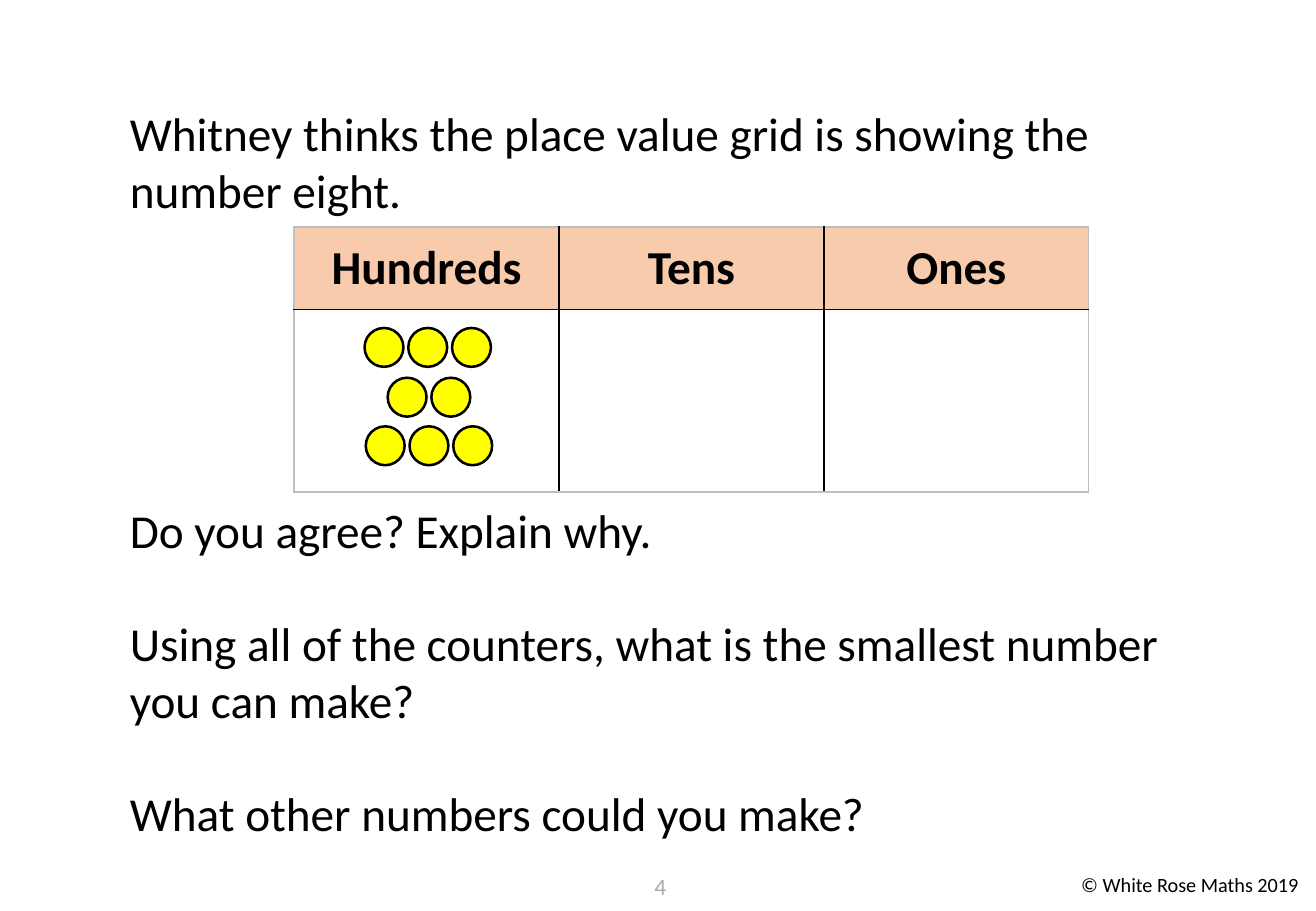
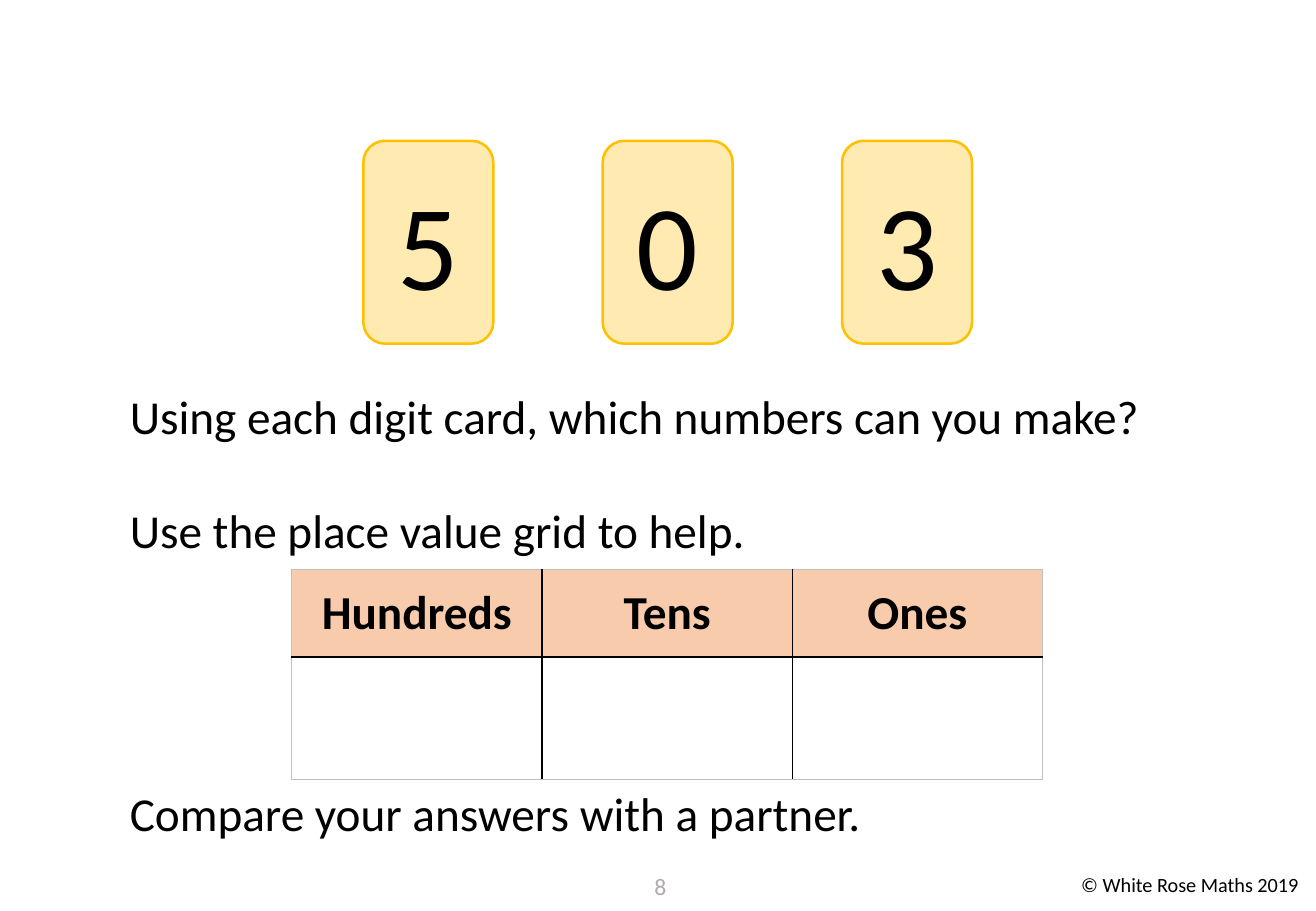
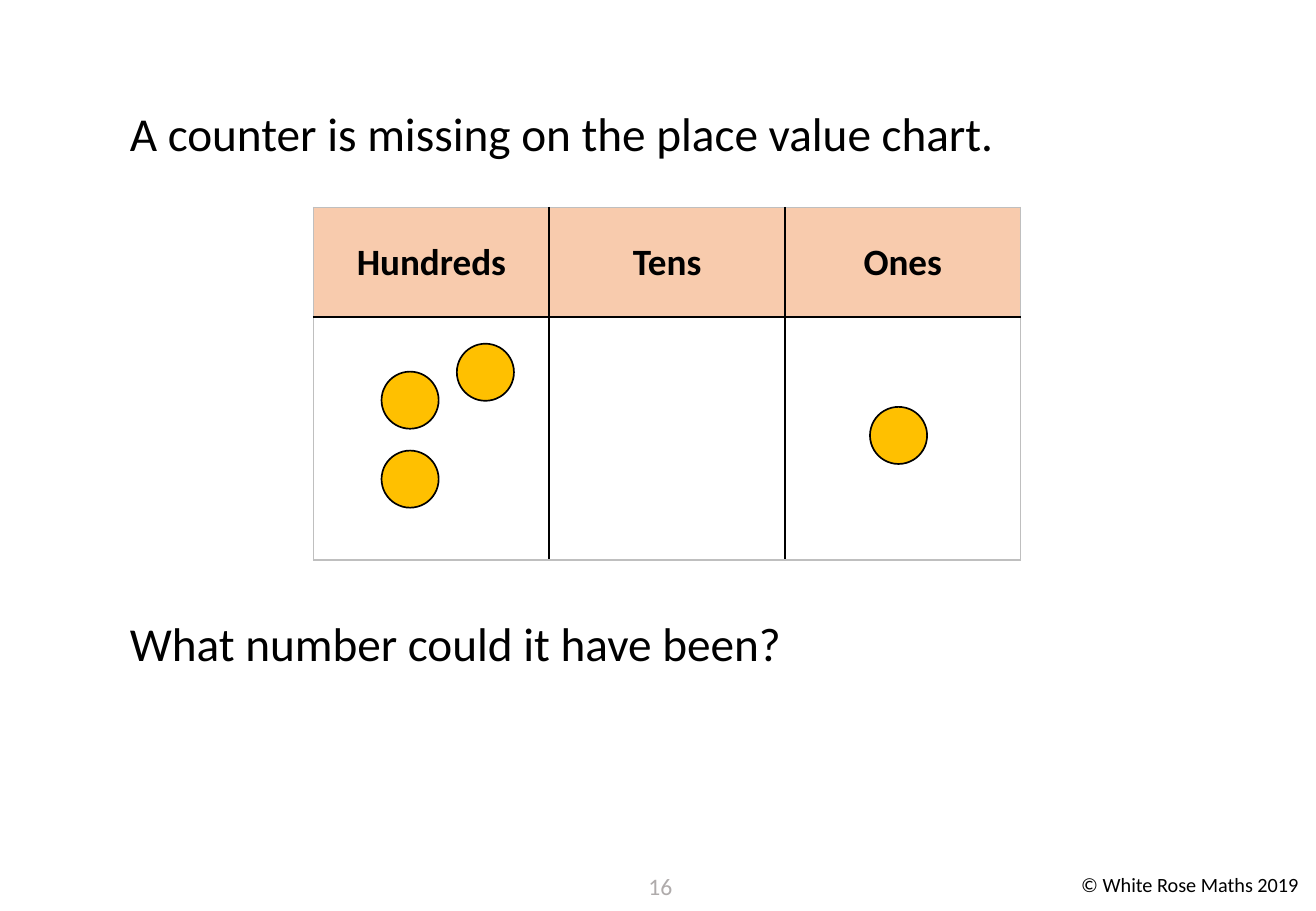
from lxml import etree
from pptx import Presentation
from pptx.dml.color import RGBColor
from pptx.enum.shapes import MSO_SHAPE
from pptx.enum.text import MSO_ANCHOR, PP_ALIGN
from pptx.oxml.ns import qn
from pptx.util import Inches, Pt

OVAL = MSO_SHAPE.OVAL
CARD = MSO_SHAPE.ROUNDED_RECTANGLE
MIDDLE = MSO_ANCHOR.MIDDLE
LEFT, CENTER = PP_ALIGN.LEFT, PP_ALIGN.CENTER

FONT = "Calibri"
BLACK = "000000"
GREY = "AFABAB"
EDGE = "BFBFBF"
PEACH = "F8CBAD"
YELLOW = "FFFF00"
GOLD = "FFC000"
BODY_SIZE = 28
LINE_PT = 33.6
BODY_TOP = 0.81
HEADINGS = ["Hundreds", "Tens", "Ones"]


def rgb(color):
    return RGBColor.from_string(color)


def write(tf, lines, size, color=BLACK, align=LEFT, bold=False, gap=0):
    tf.word_wrap = True
    for i, line in enumerate(lines):
        p = tf.paragraphs[0] if i == 0 else tf.add_paragraph()
        p.alignment = align
        if i:
            p.space_before = Pt(gap)
        r = p.add_run()
        r.text = line
        r.font.name = FONT
        r.font.size = Pt(size)
        r.font.bold = bold
        r.font.color.rgb = rgb(color)


counter_rows = [(3, 2.7, 3), (3.19, 3.11, 2), (3.01, 3.51, 3)]
yellow_counters = [(x + 0.36 * i, y) for x, y, n in counter_rows for i in range(n)]
gold_counters = [(3.14, 3.06), (3.76, 2.83), (3.14, 3.71), (7.16, 3.35)]

slides = [
    {
        "number": "4",
        "body": [
            (0, ["Whitney thinks the place value grid is showing the number eight."]),
            (7, [
                "Do you agree? Explain why.",
                "Using all of the counters, what is the smallest number you can make?",
                "What other numbers could you make?",
            ]),
        ],
        "grid": (2.42, 1.87, 2.18, [0.68, 1.5], 28),
        "cards": [],
        "counters": (yellow_counters, 0.32, YELLOW, 1.5),
    },
    {
        "number": "8",
        "body": [
            (5, [
                "Using each digit card, which numbers can you make?",
                "Use the place value grid to help.",
            ]),
            (12, ["Compare your answers with a partner."]),
        ],
        "grid": (2.4, 4.69, 2.06, [0.72, 1.01], 28),
        "cards": ["5", "0", "3"],
        "counters": ([], 0, GOLD, 1),
    },
    {
        "number": "16",
        "body": [
            (0, ["A counter is missing on the place value chart."]),
            (9, ["What number could it have been?"]),
        ],
        "grid": (2.58, 1.71, 1.94, [0.9, 2], 22),
        "cards": [],
        "counters": (gold_counters, 0.47, GOLD, 1),
    },
]

prs = Presentation()
prs.slide_width = Inches(10.83)
prs.slide_height = Inches(7.5)
blank = prs.slide_layouts[6]

for data in slides:
    s = prs.slides.add_slide(blank)

    sp = s.shapes.add_textbox(Inches(8.8), Inches(7.13), Inches(2.03), Inches(0.3))
    write(sp.text_frame, ["© White Rose Maths 2019"], 12)
    sp = s.shapes.add_textbox(Inches(5.18), Inches(7.13), Inches(0.51), Inches(0.4))
    write(sp.text_frame, [data["number"]], 14, GREY, CENTER)

    for line, texts in data["body"]:
        top = BODY_TOP + line * LINE_PT / 72
        sp = s.shapes.add_textbox(Inches(0.97), Inches(top), Inches(8.81), Inches(0.57))
        write(sp.text_frame, texts, BODY_SIZE, gap=LINE_PT)

    for i, digit in enumerate(data["cards"]):
        sp = s.shapes.add_shape(CARD, Inches(2.99 + 1.97 * i), Inches(1.16), Inches(1.07), Inches(1.67))
        sp.shadow.inherit = False
        sp.fill.solid()
        sp.fill.fore_color.rgb = rgb(GOLD)
        color = sp._element.spPr.find(qn("a:solidFill"))[0]
        etree.SubElement(color, qn("a:alpha"), val="30000")
        sp.line.color.rgb = rgb(GOLD)
        sp.line.width = Pt(1.5)
        sp.text_frame.vertical_anchor = MIDDLE
        write(sp.text_frame, [digit], 72, align=CENTER)

    left, top, col_width, heights, size = data["grid"]
    table = s.shapes.add_table(
        2, 3, Inches(left), Inches(top), Inches(3 * col_width), Inches(sum(heights))
    ).table
    table.first_row = False
    table.horz_banding = False
    for col in table.columns:
        col.width = Inches(col_width)
    for row, height in enumerate(heights):
        table.rows[row].height = Inches(height)
        for col, heading in enumerate(HEADINGS):
            cell = table.cell(row, col)
            if row == 0:
                cell.fill.solid()
                cell.fill.fore_color.rgb = rgb(PEACH)
                cell.vertical_anchor = MIDDLE
                write(cell.text_frame, [heading], size, align=CENTER, bold=True)
            else:
                cell.fill.background()
            outer = {"lnL": col == 0, "lnR": col == 2, "lnT": row == 0, "lnB": row == 1}
            tcPr = cell._tc.get_or_add_tcPr()
            for i, (side, is_outer) in enumerate(outer.items()):
                ln = etree.Element(qn("a:" + side), w=str(Pt(1)))
                fill = etree.SubElement(ln, qn("a:solidFill"))
                etree.SubElement(fill, qn("a:srgbClr"), val=EDGE if is_outer else BLACK)
                tcPr.insert(i, ln)

    spots, diameter, color, weight = data["counters"]
    for x, y in spots:
        sp = s.shapes.add_shape(OVAL, Inches(x), Inches(y), Inches(diameter), Inches(diameter))
        sp.shadow.inherit = False
        sp.fill.solid()
        sp.fill.fore_color.rgb = rgb(color)
        sp.line.color.rgb = rgb(BLACK)
        sp.line.width = Pt(weight)

prs.save("out.pptx")
